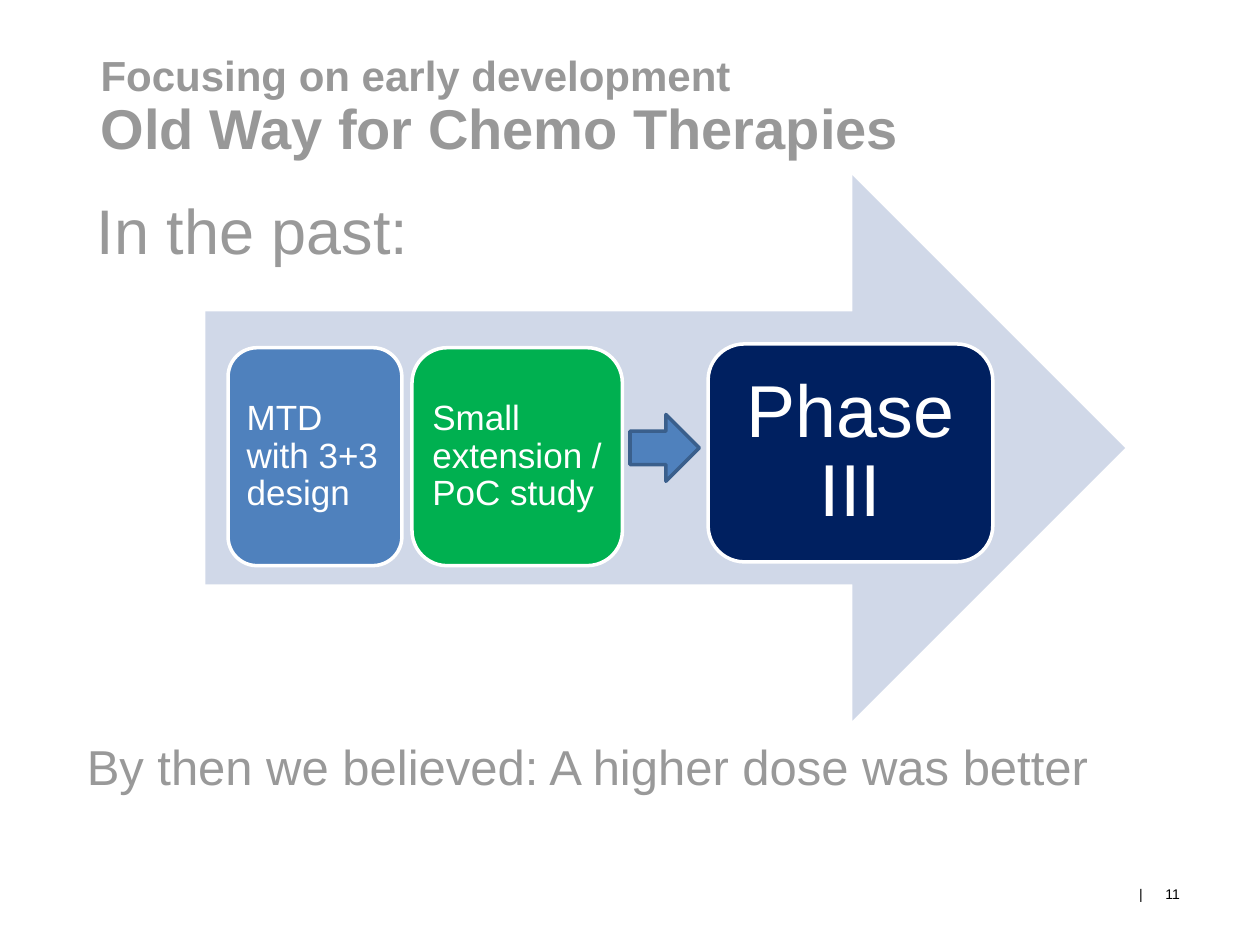
from dataclasses import dataclass

from lxml.etree import SubElement
from pptx import Presentation
from pptx.dml.color import RGBColor
from pptx.enum.shapes import MSO_SHAPE
from pptx.enum.text import MSO_ANCHOR, PP_ALIGN
from pptx.oxml.ns import qn
from pptx.util import Inches, Pt


@dataclass(frozen=True)
class Theme:
    font: str = "Arial"
    title: str = "989898"
    body: str = "999999"
    black: str = "000000"
    white: str = "FFFFFF"
    band: str = "D0D8E8"
    blue: str = "4F81BD"
    blue_edge: str = "3A5F8C"
    green: str = "00B050"
    navy: str = "002060"
    number_size: int = 8
    card_size: int = 20
    kicker_size: int = 24
    note_size: int = 28
    title_size: int = 32
    lead_size: int = 36
    phase_size: int = 42
    edge: int = 2
    tight: float = 0.9


class SlideBuilder:
    """Places elements on a grid of 100 columns by 75 rows."""

    def __init__(self, prs, theme):
        self.theme = theme
        self.slide = prs.slides.add_slide(prs.slide_layouts[6])
        self.col = prs.slide_width / 100
        self.row = prs.slide_height / 75

    def place(self, x, y, w, h):
        return [round(v) for v in (x * self.col, y * self.row,
                                   w * self.col, h * self.row)]

    def frame(self, sp, insets=(0.1, 0.05, 0.1, 0.05), **values):
        """Set insets (left, top, right, bottom) and text frame values."""
        tf = sp.text_frame
        sides = ("margin_left", "margin_top", "margin_right", "margin_bottom")
        values = {"word_wrap": True, "vertical_anchor": MSO_ANCHOR.TOP,
                  **dict(zip(sides, map(Inches, insets))), **values}
        for name, value in values.items():
            setattr(tf, name, value)
        return tf.paragraphs[0]

    def run(self, p, text, size, color, bold=False):
        r = p.add_run()
        r.text = text
        values = {"name": self.theme.font, "size": Pt(size), "bold": bold}
        for name, value in values.items():
            setattr(r.font, name, value)
        r.font.color.rgb = RGBColor.from_string(color)

    def text(self, box, runs, spacing=1.0, **frame):
        """Add a text box; each (text, size, bold) run starts a new line."""
        sp = self.slide.shapes.add_textbox(*self.place(*box))
        p = self.frame(sp, **frame)
        p.line_spacing = spacing
        for i, (text, size, color, bold) in enumerate(runs):
            if i:
                p.add_line_break()
            self.run(p, text, size, color, bold)

    def shape(self, kind, box, fill, line=None):
        sp = self.slide.shapes.add_shape(kind, *self.place(*box))
        sp.shadow.inherit = False
        sp.fill.solid()
        sp.fill.fore_color.rgb = RGBColor.from_string(fill)
        if line:
            sp.line.color.rgb = RGBColor.from_string(line)
            sp.line.width = Pt(self.theme.edge)
        else:
            sp.line.fill.background()
        return sp

    def arrow(self, box, fill, line=None):
        self.shape(MSO_SHAPE.RIGHT_ARROW, box, fill, line)

    def card(self, box, text, fill, size, inset, align):
        sp = self.shape(MSO_SHAPE.ROUNDED_RECTANGLE, box, fill, self.theme.white)
        p = self.frame(sp, (inset,) * 4, vertical_anchor=MSO_ANCHOR.MIDDLE)
        p.alignment = align
        p.line_spacing = self.theme.tight
        self.run(p, text, size, self.theme.white)

    def page_number(self, box, number):
        """Add a bar and the page number, set apart by a tab stop."""
        sp = self.slide.shapes.add_textbox(*self.place(*box))
        p = self.frame(sp, (0.2, 0, 0, 0))
        tabs = SubElement(p._p.get_or_add_pPr(), qn("a:tabLst"))
        SubElement(tabs, qn("a:tab"), pos=str(Inches(0.21)), algn="l")
        self.run(p, f"|\t{number}", self.theme.number_size, self.theme.black)


def main():
    prs = Presentation()
    prs.slide_width, prs.slide_height = Inches(10), Inches(7.5)
    t = Theme()
    s = SlideBuilder(prs, t)

    s.text((7, 3.6, 91.8, 8.7),
           [("Focusing on early development", t.kicker_size, t.title, True),
            ("Old Way for Chemo Therapies", t.title_size, t.title, True)],
           spacing=t.tight, insets=(0.1, 0.08, 0.1, 0.05))

    s.arrow((16.3, 13.9, 73, 43.3), t.band)
    cards = [
        (18.1, 27.6, 13.8, "MTD with 3+3 design", t.blue,
         t.card_size, 0.08, PP_ALIGN.LEFT),
        (32.7, 27.6, 16.7, "Small extension /PoC study", t.green,
         t.card_size, 0.08, PP_ALIGN.LEFT),
        (56.2, 27.3, 22.6, "Phase III", t.navy,
         t.phase_size, 0.17, PP_ALIGN.CENTER),
    ]
    for x, y, w, *content in cards:
        s.card((x, y, w, 17.3), *content)
    s.arrow((50, 32.9, 5.5, 5.3), t.blue, t.blue_edge)

    s.text((6.7, 14.7, 30.7, 7.1),
           [("In the past:", t.lead_size, t.body, False)])
    s.text((5.9, 58, 82.5, 5.7),
           [("By then we believed: A higher dose was better",
             t.note_size, t.body, False)], word_wrap=False)
    s.page_number((88.4, 70.3, 5.3, 2.6), 11)

    prs.save("out.pptx")


if __name__ == "__main__":
    main()
